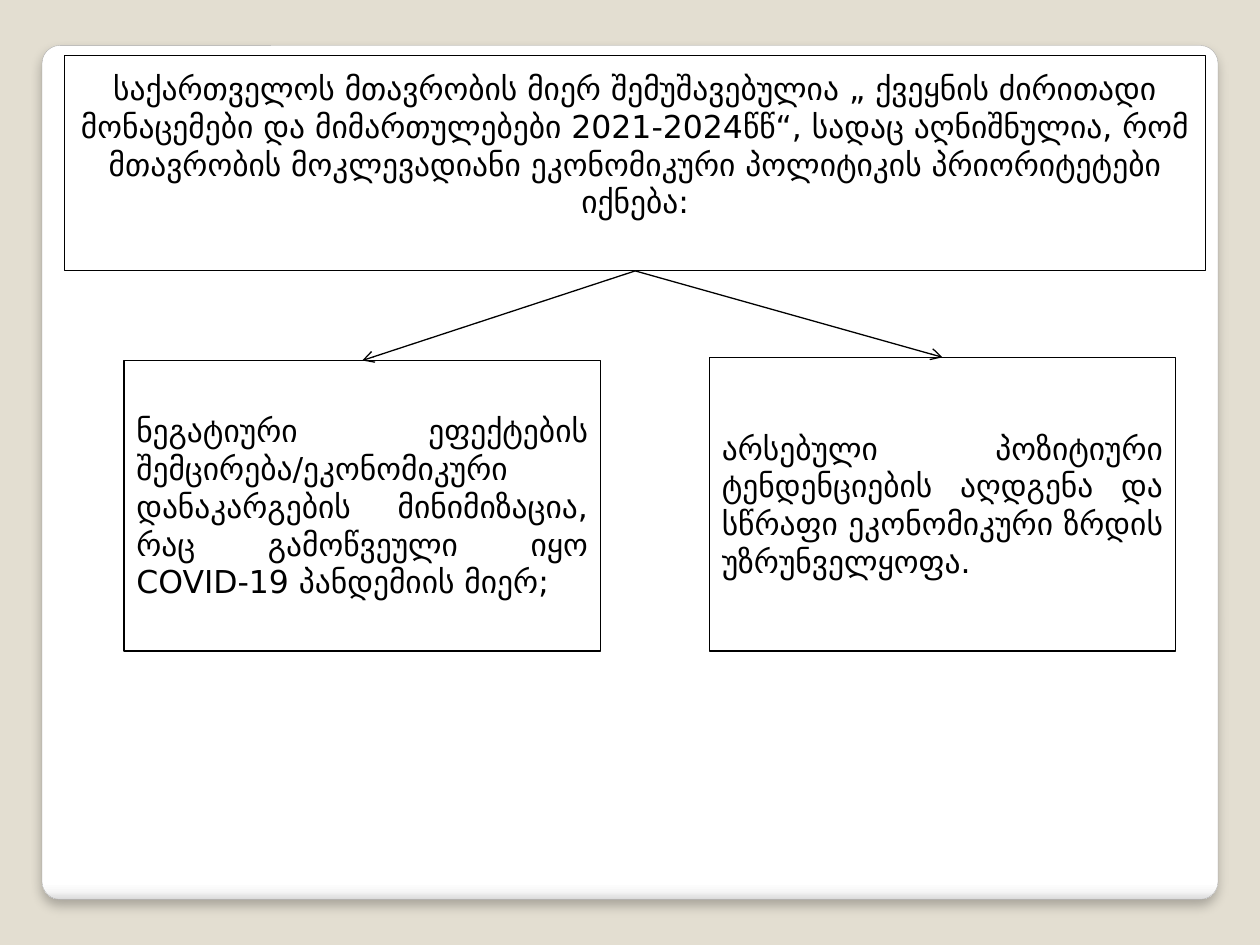
from pptx import Presentation
from pptx.dml.color import RGBColor
from pptx.enum.shapes import MSO_CONNECTOR, MSO_SHAPE
from pptx.enum.text import MSO_ANCHOR, PP_ALIGN
from pptx.oxml import parse_xml
from pptx.oxml.ns import nsdecls, qn
from pptx.util import Pt

RECT = MSO_SHAPE.RECTANGLE
ROUND = MSO_SHAPE.ROUNDED_RECTANGLE
LINE = MSO_CONNECTOR.STRAIGHT
MIDDLE = MSO_ANCHOR.MIDDLE
CENTER = PP_ALIGN.CENTER
JUSTIFY = PP_ALIGN.JUSTIFY

SAND = RGBColor(0xE3, 0xDE, 0xD1)
WHITE = RGBColor(0xFF, 0xFF, 0xFF)
BLACK = RGBColor(0, 0, 0)
GRAY = RGBColor(0xA4, 0xA4, 0xA4)
PALE = RGBColor(0xF7, 0xF7, 0xF7)
EDGE = RGBColor(0xDA, 0xDA, 0xDA)

TOP, BOTTOM = 0, 2


class Deck:
    font = "DejaVu Sans"
    size = 18
    stroke = 0.75

    def __init__(self, slide):
        self.slide = slide

    def shape(self, kind, area, color, width):
        item = self.slide.shapes.add_shape(kind, *map(Pt, area))
        item.shadow.inherit = False
        item.line.color.rgb = color
        item.line.width = Pt(width)
        return item

    def panel(self, area, stops):
        item = self.shape(ROUND, area, GRAY, 0.16)
        item.adjustments[0] = 0.021
        # Vertical gradient that darkens only at the bottom edge
        item.fill.gradient()
        item.fill.gradient_angle = 270
        props = item._element.spPr
        ramp = props.find(qn("a:gradFill")).find(qn("a:gsLst"))
        for old in list(ramp):
            ramp.remove(old)
        for spot, color in stops:
            ramp.append(parse_xml(
                f'<a:gs {nsdecls("a")} pos="{spot * 1000}">'
                f'<a:srgbClr val="{color}"/></a:gs>'))
        # Soft shadow below
        props.find(qn("a:effectLst")).append(parse_xml(
            f'<a:outerShdw {nsdecls("a")} blurRad="{Pt(6)}" dist="{Pt(4)}" '
            'dir="5400000" algn="t" rotWithShape="0"><a:srgbClr val="000000">'
            '<a:alpha val="25000"/></a:srgbClr></a:outerShdw>'))

    def box(self, area, text, align, foot=3.6):
        item = self.shape(RECT, area, BLACK, self.stroke)
        item.fill.solid()
        item.fill.fore_color.rgb = WHITE
        frame = item.text_frame
        frame.word_wrap = True
        frame.vertical_anchor = MIDDLE
        frame.margin_bottom = Pt(foot)
        para = frame.paragraphs[0]
        para.alignment = align
        run = para.add_run()
        run.text = text
        run.font.name = self.font
        run.font.size = Pt(self.size)
        run.font.color.rgb = BLACK
        return item

    def arrow(self, start, end):
        item = self.slide.shapes.add_connector(LINE, 0, 0, 0, 0)
        item.begin_connect(start, BOTTOM)
        item.end_connect(end, TOP)
        item.line.color.rgb = BLACK
        item.line.width = Pt(self.stroke)
        item.line._get_or_add_ln().append(
            parse_xml(f'<a:tailEnd {nsdecls("a")} type="arrow"/>'))
        item._element.spPr.append(parse_xml(f'<a:effectLst {nsdecls("a")}/>'))


def main():
    prs = Presentation()
    prs.slide_width, prs.slide_height = Pt(720), Pt(540)
    slide = prs.slides.add_slide(prs.slide_layouts[6])
    back = slide.background.fill
    back.solid()
    back.fore_color.rgb = SAND
    deck = Deck(slide)

    # Rounded panel
    deck.panel((24, 26, 672, 488),
               [(0, WHITE), (98, WHITE), (99, PALE), (100, EDGE)])

    # Policy statement, with room for one line beneath it
    head = deck.box(
        (36.9, 31.6, 652.2, 123.2),
        "საქართველოს მთავრობის მიერ შემუშავებულია „ ქვეყნის ძირითადი "
        "მონაცემები და მიმართულებები 2021-2024წწ“, სადაც აღნიშნულია, რომ "
        "მთავრობის მოკლევადიანი ეკონომიკური პოლიტიკის პრიორიტეტები იქნება:",
        CENTER, foot=24.6)

    # Two priorities
    left = deck.box(
        (70.8, 206, 272.4, 166),
        "ნეგატიური ეფექტების შემცირება/ეკონომიკური დანაკარგების "
        "მინიმიზაცია, რაც გამოწვეული იყო COVID-19 პანდემიის მიერ;", JUSTIFY)
    right = deck.box(
        (405.4, 204.2, 266.4, 167.8),
        "არსებული პოზიტიური ტენდენციების აღდგენა და სწრაფი ეკონომიკური "
        "ზრდის უზრუნველყოფა.", JUSTIFY)

    # Arrows from the statement to each priority
    for goal in (right, left):
        deck.arrow(head, goal)

    prs.save("out.pptx")


if __name__ == "__main__":
    main()
